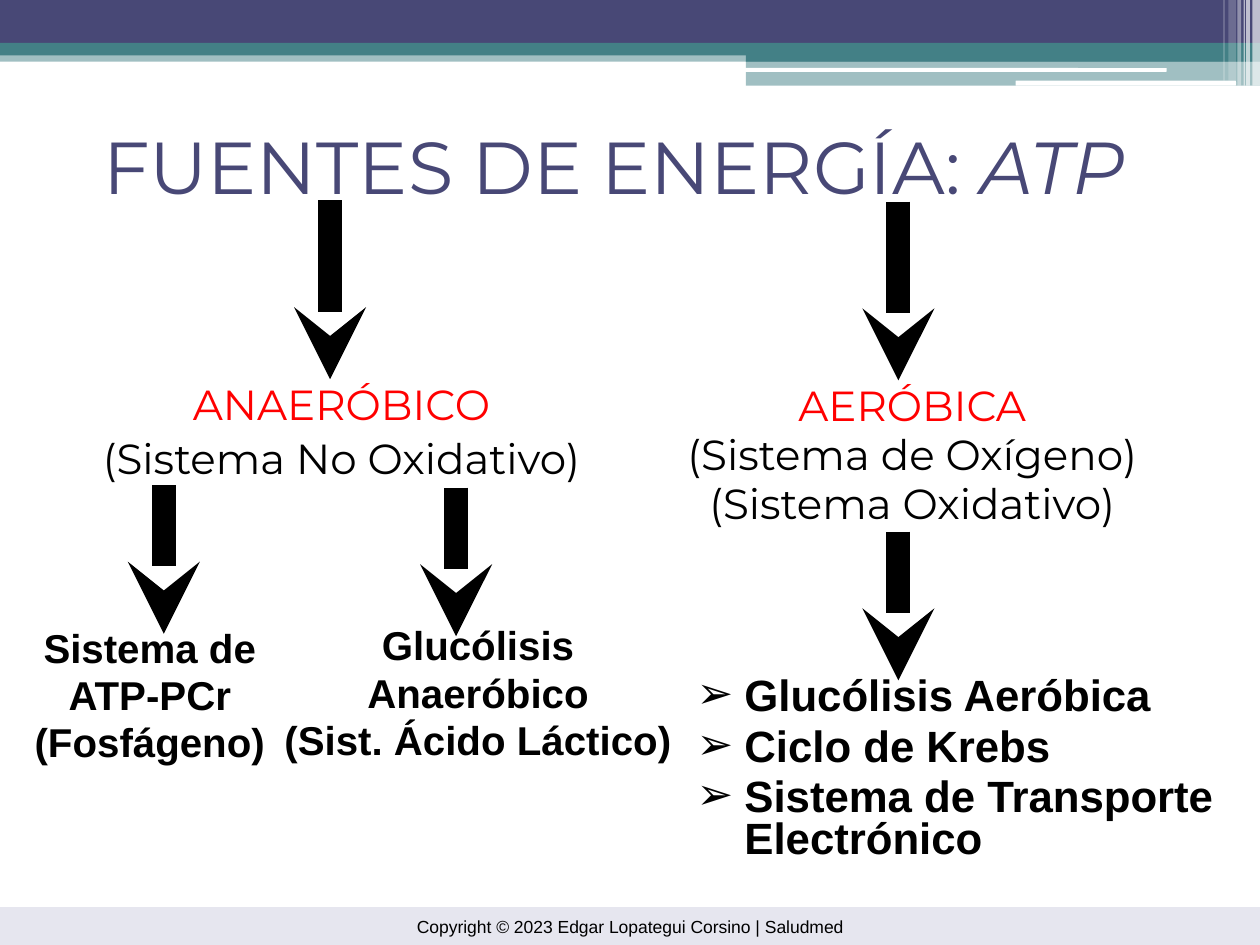
import pptx
import pptx.dml.color
import pptx.enum.shapes
import pptx.enum.text
import pptx.oxml.ns
import pptx.util
from lxml import etree

RGB = pptx.dml.color.RGBColor.from_string
SHAPE = pptx.enum.shapes.MSO_SHAPE
ALIGN = pptx.enum.text.PP_ALIGN
MIDDLE = pptx.enum.text.MSO_ANCHOR.MIDDLE
Pt = pptx.util.Pt
qn = pptx.oxml.ns.qn

COLORS = {"indigo": "484876", "teal": "438086", "white": "FFFFFF",
          "mist": "E6E6EF", "red": "FF0000", "black": "000000"}

prs = pptx.Presentation()
prs.slide_width = pptx.util.Inches(10)
prs.slide_height = pptx.util.Inches(7.5)
COL = prs.slide_width / 100
ROW = prs.slide_height / 75
slide = prs.slides.add_slide(prs.slide_layouts[5])


def grid(x, y, w, h):
    return [round(x * COL), round(y * ROW), round(w * COL), round(h * ROW)]


def add_run(p, text, color, **fmt):
    r = p.add_run()
    r.text = text
    for name, value in fmt.items():
        setattr(r.font, name, value)
    r.font.color.rgb = RGB(COLORS[color])


bars = [
    (0, 4, 100, 0.9, "teal", 50, SHAPE.RECTANGLE),
    (0, 0, 100, 3.4, "indigo", 100, SHAPE.RECTANGLE),
    (0, 3.4, 100, 1, "teal", 100, SHAPE.RECTANGLE),
    (59.2, 3.9, 40.8, 1, "teal", 100, SHAPE.RECTANGLE),
    (59.2, 4.8, 40.8, 2, "teal", 50, SHAPE.RECTANGLE),
    (59.1, 5.4, 33.5, 0.3, "white", 100, SHAPE.ROUNDED_RECTANGLE),
    (80.6, 6.4, 17.5, 0.4, "white", 100, SHAPE.ROUNDED_RECTANGLE),
    (99.4, 0, 0.6, 6.8, "white", 65, SHAPE.RECTANGLE),
    (98.9, 0, 0.3, 6.8, "white", 65, SHAPE.RECTANGLE),
    (98.7, 0, 0.1, 6.8, "white", 60, SHAPE.RECTANGLE),
    (98.2, 0, 0.3, 6.8, "white", 40, SHAPE.RECTANGLE),
    (97.5, 0, 0.6, 6.4, "white", 20, SHAPE.RECTANGLE),
    (97.1, 0, 0.1, 6.4, "white", 30, SHAPE.RECTANGLE),
    (0, 72, 100, 3, "mist", 100, SHAPE.RECTANGLE),
]
for x, y, w, h, color, opacity, kind in bars:
    s = slide.shapes.add_shape(kind, *grid(x, y, w, h))
    s.shadow.inherit = False
    s.fill.solid()
    s.fill.fore_color.rgb = RGB(COLORS[color])
    s.line.fill.background()
    if opacity < 100:
        tint = s._element.spPr.find(".//" + qn("a:srgbClr"))
        etree.SubElement(tint, qn("a:alpha"), val=str(opacity * 1000))

footer = s.text_frame
footer.vertical_anchor = MIDDLE
p = footer.paragraphs[0]
p.alignment = ALIGN.CENTER
add_run(p, "Copyright © 2023 Edgar Lopategui Corsino | Saludmed", "black",
        name="Arial", size=Pt(10))

title = slide.shapes.title
title.left, title.top, title.width, title.height = grid(1.2, 7.6, 95.1, 11)
title.text_frame.vertical_anchor = MIDDLE
p = title.text_frame.paragraphs[0]
p.alignment = ALIGN.CENTER
for text, italic in [("FUENTES DE ENERGÍA: ", False), ("ATP", True)]:
    add_run(p, text, "indigo", name="Montserrat", size=Pt(42), italic=italic)

heading = {"name": "Montserrat", "size": Pt(24)}
system = {"name": "Arial", "size": Pt(23), "bold": True}
process = {"name": "Arial", "size": Pt(25), "bold": True}
blocks = [
    ((4.9, 30, 44.4, 8.3), heading, 0.9, "red", "",
     ["ANAERÓBICO", "(Sistema No Oxidativo)"]),
    ((1.5, 49.7, 20.8, 10.8), system, 0.8, "black", "",
     ["Sistema de", "ATP-PCr", "(Fosfágeno)"]),
    ((51.6, 30.4, 41.6, 11.8), heading, 0.8, "red", "",
     ["AERÓBICA", "(Sistema de Oxígeno)", "(Sistema Oxidativo)"]),
    ((21.2, 49.5, 33.5, 11.4), system, 0.8, "black", "",
     ["Glucólisis", "Anaeróbico", "(Sist. Ácido Láctico)"]),
    ((54.3, 53.3, 44.2, 15.8), process, 0.8, "black", "➢",
     ["Glucólisis Aeróbica", "Ciclo de Krebs",
      "Sistema de Transporte Electrónico"]),
]
for area, fmt, spacing, first_color, bullet, lines in blocks:
    tf = slide.shapes.add_textbox(*grid(*area)).text_frame
    tf.word_wrap = True
    for i, text in enumerate(lines):
        p = tf.add_paragraph() if i else tf.paragraphs[0]
        p.alignment = ALIGN.LEFT if bullet else ALIGN.CENTER
        p.line_spacing = spacing
        p.space_before = Pt(5 if i else 0)
        if bullet:
            pPr = p._p.get_or_add_pPr()
            indent = round(3.8 * COL)
            pPr.set("marL", str(indent))
            pPr.set("indent", str(-indent))
            etree.SubElement(pPr, qn("a:buFont"), typeface="Arial")
            etree.SubElement(pPr, qn("a:buChar"), char=bullet)
        add_run(p, text, "black" if i else first_color, **fmt)

arrows = [(26.2, 15.9, 14.2), (71.3, 16, 14.2), (71.3, 42.2, 11.8),
          (13, 38.5, 11.8), (36.2, 38.7, 11.8)]
for x, y, length in arrows:
    s = slide.shapes.add_connector(
        pptx.enum.shapes.MSO_CONNECTOR.STRAIGHT,
        *grid(x, y, x, y + length))
    s.line.width = Pt(13.75)
    s.line.color.rgb = RGB(COLORS["black"])
    spPr = s._element.spPr
    etree.SubElement(spPr.find(qn("a:ln")), qn("a:tailEnd"), type="stealth")
    etree.SubElement(spPr, qn("a:effectLst"))

prs.save("out.pptx")
